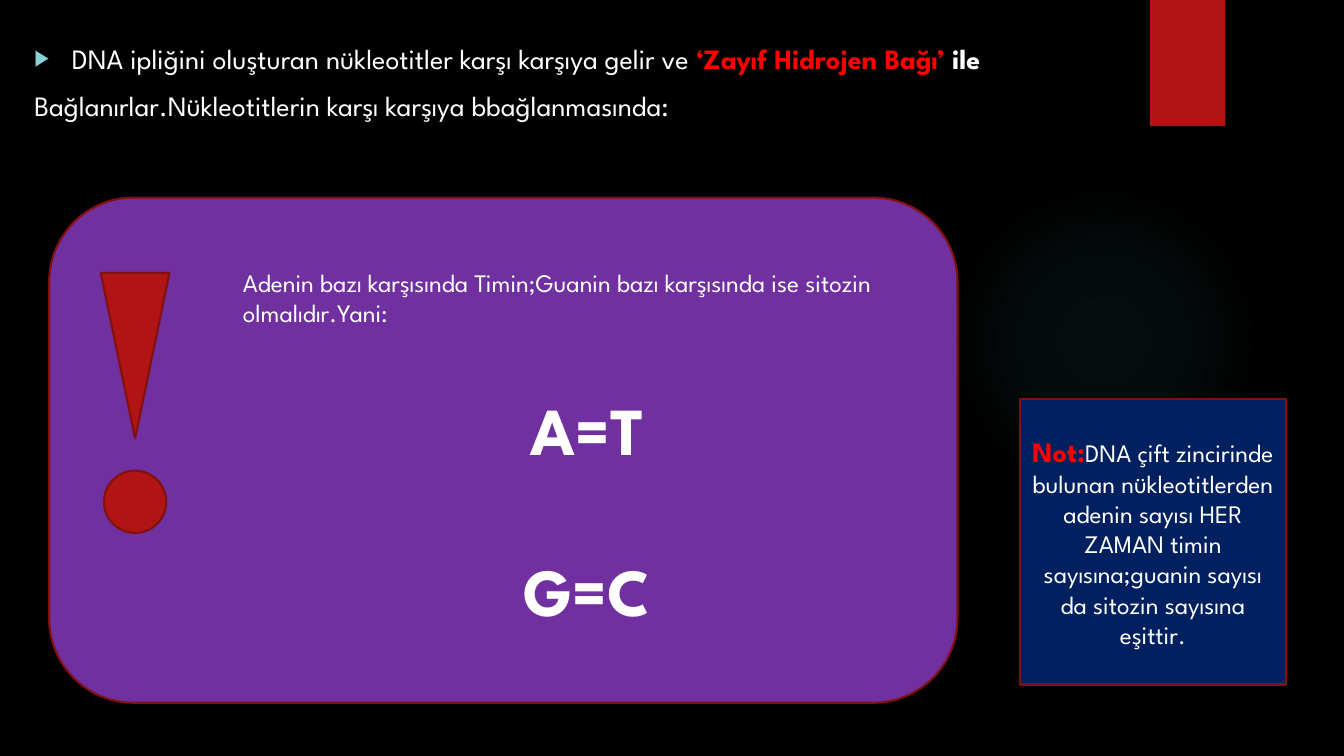
import pptx
import pptx.dml.color
import pptx.enum.shapes
import pptx.enum.text
import pptx.oxml
import pptx.oxml.ns
import pptx.util
from pptx.util import Cm, Pt

RGBColor = pptx.dml.color.RGBColor
Shape = pptx.enum.shapes.MSO_SHAPE
Align = pptx.enum.text.PP_ALIGN
Anchor = pptx.enum.text.MSO_ANCHOR
AutoSize = pptx.enum.text.MSO_AUTO_SIZE

BLACK = RGBColor(0x00, 0x00, 0x00)
WHITE = RGBColor(0xFF, 0xFF, 0xFF)
RED = RGBColor(0xFF, 0x00, 0x00)
CRIMSON = RGBColor(0xB0, 0x15, 0x13)
MAROON = RGBColor(0x82, 0x10, 0x0E)
PURPLE = RGBColor(0x70, 0x30, 0xA0)
NAVY = RGBColor(0x00, 0x20, 0x60)
AQUA = RGBColor(0x8A, 0xD0, 0xD6)
TEAL = RGBColor(0x50, 0xB9, 0xC1)

FONT = "League Spartan"
GLOW_STOPS = [(0, 7), (36, 6), (69, 0)]


def set_all(target, formats):
    for name, value in formats.items():
        setattr(target, name, value)


def add_span(para, text, size, color=WHITE, bold=False):
    span = para.add_run()
    span.text = text
    set_all(span.font, {"name": FONT, "size": Pt(size), "bold": bold})
    span.font.color.rgb = color


def add_shape(shapes, kind, place, fill, line=None):
    """Add a flat shape; place is left, top, width, height in centimetres."""
    shape = shapes.add_shape(kind, *map(Cm, place))
    shape.shadow.inherit = False
    shape.fill.solid()
    shape.fill.fore_color.rgb = fill
    if line is None:
        shape.line.fill.background()
    else:
        shape.line.color.rgb = line
        shape.line.width = Pt(1.5)
    return shape


def add_glow(page):
    glow = add_shape(page.shapes, Shape.OVAL, (23.9, 4.65, 7.82, 7.82), TEAL)
    stops = "".join(
        f'<a:gs pos="{position * 1000}"><a:srgbClr val="{TEAL}">'
        f'<a:alpha val="{alpha * 1000}"/></a:srgbClr></a:gs>'
        for position, alpha in GLOW_STOPS
    )
    gradient = pptx.oxml.parse_xml(
        f'<a:gradFill {pptx.oxml.ns.nsdecls("a")}><a:gsLst>{stops}</a:gsLst>'
        '<a:path path="circle">'
        '<a:fillToRect l="50000" t="50000" r="50000" b="50000"/>'
        "</a:path></a:gradFill>"
    )
    properties = glow.element.spPr
    solid = properties.find(pptx.oxml.ns.qn("a:solidFill"))
    properties.replace(solid, gradient)


def set_bullet(para, indent, *elements):
    properties = para._p.get_or_add_pPr()
    properties.set("marL", str(indent))
    properties.set("indent", str(-indent))
    for element in elements:
        head, _, rest = element.partition(">")
        xml = f'<a:{head} {pptx.oxml.ns.nsdecls("a")}'
        xml += f">{rest}</a:{head.split()[0]}>" if rest else "/>"
        properties.append(pptx.oxml.parse_xml(xml))


def fill_body(body):
    set_all(body, {"left": Cm(0.61), "top": Cm(0.91), "width": Cm(32.18), "height": Cm(17.15)})
    frame = body.text_frame
    set_all(frame, {"auto_size": AutoSize.NONE, "vertical_anchor": Anchor.TOP, "word_wrap": True})

    first = frame.paragraphs[0]
    set_bullet(first, Cm(0.95), f'buClr><a:srgbClr val="{AQUA}"/>', 'buSzPct val="80000"',
               'buFont typeface="Arial"', 'buChar char="▶"')
    first.space_before = Pt(0)
    add_span(first, "DNA ipliğini oluşturan nükleotitler karşı karşıya gelir ve ", 20)
    add_span(first, "‘Zayıf Hidrojen Bağı’ ", 20, RED, True)
    add_span(first, "ile", 20, bold=True)

    second = frame.add_paragraph()
    set_bullet(second, Cm(0), "buNone")
    second.space_before = Pt(10)
    add_span(second, "Bağlanırlar.Nükleotitlerin karşı karşıya bbağlanmasında:", 20)


def add_note(page):
    note = add_shape(page.shapes, Shape.RECTANGLE, (25.7, 10.06, 6.71, 7.19), NAVY, MAROON)
    set_all(note.text_frame, {"word_wrap": True, "vertical_anchor": Anchor.MIDDLE})
    para = note.text_frame.paragraphs[0]
    para.alignment = Align.CENTER
    add_span(para, "Not:", 20, RED, True)
    add_span(para, "DNA çift zincirinde bulunan nükleotitlerden adenin sayısı HER ZAMAN "
                   "timin sayısına;guanin sayısı da sitozin sayısına eşittir.", 18)


def add_exclamation_mark(page):
    mark = page.shapes.add_group_shape()
    stroke = add_shape(mark.shapes, Shape.ISOSCELES_TRIANGLE, (2.54, 6.88, 1.73, 4.17),
                       CRIMSON, MAROON)
    stroke.rotation = 180
    add_shape(mark.shapes, Shape.OVAL, (2.62, 11.86, 1.57, 1.57), CRIMSON, MAROON)


def add_pairing_rule(page):
    box = page.shapes.add_textbox(Cm(5.87), Cm(6.6), Cm(17.86), Cm(9.5))
    frame = box.text_frame
    frame.word_wrap = True
    add_span(frame.paragraphs[0], "Adenin bazı karşısında Timin;Guanin bazı karşısında "
                                  "ise sitozin olmalıdır.Yani:", 18)
    for pair, gap in [("A=T", 43.4), ("G=C", 57.8)]:
        para = frame.add_paragraph()
        set_all(para, {"alignment": Align.CENTER, "space_before": Pt(gap)})
        add_span(para, pair, 48, bold=True)


def main():
    deck = pptx.Presentation()
    set_all(deck, {"slide_width": Cm(33.87), "slide_height": Cm(19.05)})
    page = deck.slides.add_slide(deck.slide_layouts[1])
    page.background.fill.solid()
    page.background.fill.fore_color.rgb = BLACK

    title = page.shapes.title.element
    title.getparent().remove(title)
    fill_body(page.placeholders[1])

    add_glow(page)
    add_shape(page.shapes, Shape.RECTANGLE, (28.98, 0, 1.9, 3.18), CRIMSON)
    add_note(page)
    add_shape(page.shapes, Shape.ROUNDED_RECTANGLE, (1.24, 4.98, 22.89, 12.73), PURPLE, MAROON)
    add_exclamation_mark(page)
    add_pairing_rule(page)
    deck.save("out.pptx")


if __name__ == "__main__":
    main()
